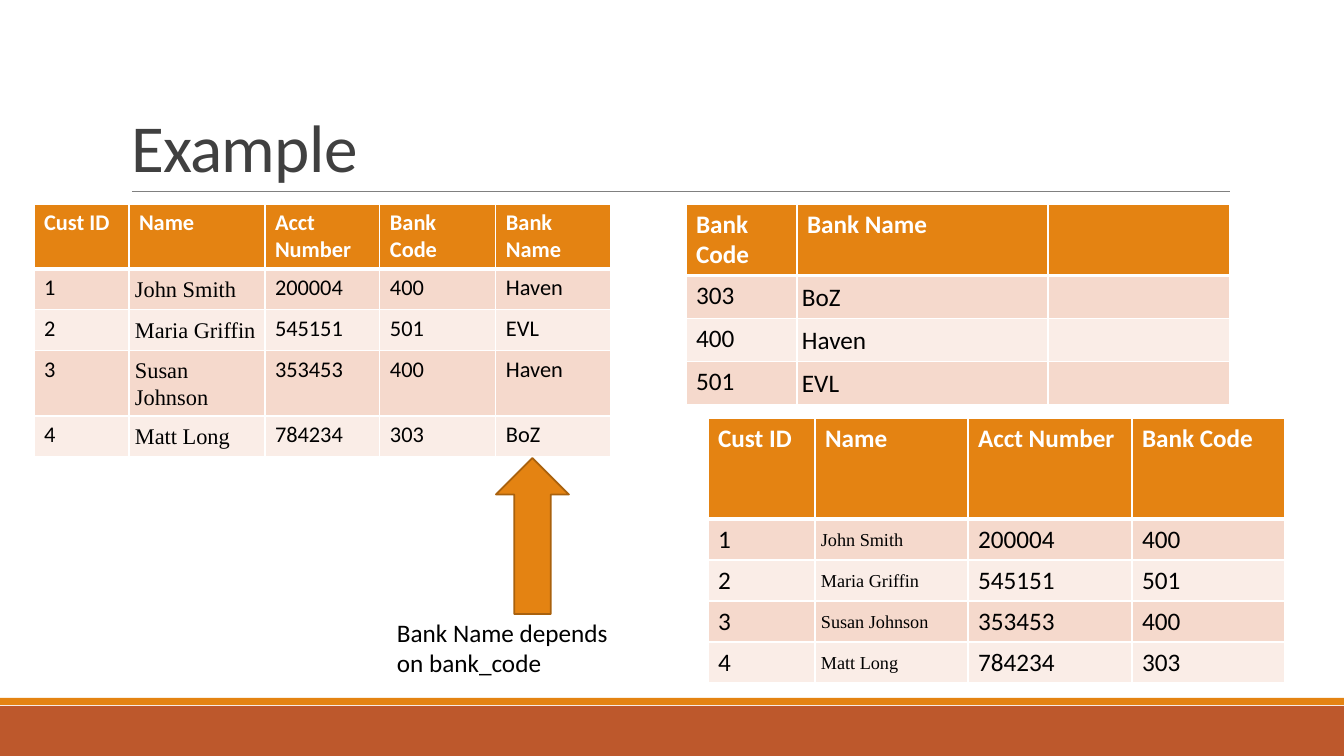
from lxml import etree
from pptx import Presentation
from pptx.dml.color import RGBColor
from pptx.enum.shapes import MSO_CONNECTOR as Connector, MSO_SHAPE as Preset
from pptx.enum.text import MSO_ANCHOR as Anchor, MSO_AUTO_SIZE as AutoSize, PP_ALIGN as Align
from pptx.oxml.ns import qn
from pptx.util import Emu, Pt

EMU_PER_PX = 914400 / 100.8
COLORS = {
    "orange": "E48312",
    "rust": "BD582C",
    "arrow_edge": "A9610D",
    "rule": "808080",
    "title": "404040",
    "white": "FFFFFF",
    "black": "000000",
    "band_dark": "F5D9CC",
    "band_light": "FAEDE7",
}
SANS, SERIF = "Calibri", "Times New Roman"
ROW_HEIGHT = 41

ACCOUNTS = [
    ["Cust ID", "Name", "Acct Number", "Bank Code", "Bank Name"],
    ["1", "John Smith", "200004", "400", "Haven"],
    ["2", "Maria Griffin", "545151", "501", "EVL"],
    ["3", "Susan Johnson", "353453", "400", "Haven"],
    ["4", "Matt Long", "784234", "303", "BoZ"],
]
BANKS = [
    ["Bank Code", "Bank Name", ""],
    ["303", "BoZ", ""],
    ["400", "Haven", ""],
    ["501", "EVL", ""],
]
ACCOUNTS_WITHOUT_BANK = [row[:4] for row in ACCOUNTS]


def px(value):
    return Emu(round(value * EMU_PER_PX))


def color(name):
    return RGBColor.from_string(COLORS[name])


def format_text(text_frame, size, color_name, font=SANS, bold=False):
    for paragraph in text_frame.paragraphs:
        for run in paragraph.runs:
            run.font.name = font
            run.font.size = Pt(size)
            run.font.bold = bold
            run.font.color.rgb = color(color_name)


def add_title(slide, text, left, top, width, height):
    title = slide.shapes.title
    title.left, title.top, title.width, title.height = map(px, (left, top, width, height))
    frame = title.text_frame
    frame.text = text
    frame.word_wrap = True
    frame.auto_size = AutoSize.NONE
    frame.vertical_anchor = Anchor.BOTTOM
    paragraph = frame.paragraphs[0]
    paragraph.alignment = Align.LEFT
    paragraph.line_spacing = 0.85
    format_text(frame, 48, "title")
    paragraph.runs[0].font._element.set("spc", "-50")


def add_preset(slide, preset, left, top, width, height, fill, edge=None):
    shape = slide.shapes.add_shape(preset, *map(px, (left, top, width, height)))
    shape.shadow.inherit = False
    shape.fill.solid()
    shape.fill.fore_color.rgb = color(fill)
    if edge:
        shape.line.color.rgb = color(edge)
        shape.line.width = Pt(1.25)
    else:
        shape.line.fill.background()
    return shape


def add_rule(slide, left, right, y):
    rule = slide.shapes.add_connector(Connector.STRAIGHT, px(left), px(y), px(right), px(y))
    rule.line.color.rgb = color("rule")
    rule.line.width = Pt(0.5)
    etree.SubElement(rule._element.spPr, qn("a:effectLst"))


def add_label(slide, text, left, top, width, height):
    box = slide.shapes.add_textbox(*map(px, (left, top, width, height)))
    frame = box.text_frame
    frame.text = text
    frame.word_wrap = True
    frame.auto_size = AutoSize.SHAPE_TO_FIT_TEXT
    format_text(frame, 18, "black")


def add_borders(cell, top, bottom):
    """Draw white cell borders; top and bottom are widths in points."""
    properties = cell._tc.get_or_add_tcPr()
    for side, points in (("L", 1), ("R", 1), ("T", top), ("B", bottom)):
        line = etree.SubElement(properties, qn(f"a:ln{side}"), w=str(Pt(points)))
        fill = etree.SubElement(line, qn("a:solidFill"))
        etree.SubElement(fill, qn("a:srgbClr"), val=COLORS["white"])


def format_cell(cell, row, size):
    add_borders(cell, top=3 if row == 1 else 1, bottom=3 if row == 0 else 1)
    fill = "orange" if row == 0 else "band_dark" if row % 2 else "band_light"
    cell.fill.solid()
    cell.fill.fore_color.rgb = color(fill)
    format_text(cell.text_frame, size, "black" if row else "white", bold=row == 0)


def format_name_cell(cell, size, font, inset):
    cell.vertical_anchor = Anchor.MIDDLE
    cell.margin_left = cell.margin_right = px(inset)
    cell.margin_top = cell.margin_bottom = px(inset)
    paragraph = cell.text_frame.paragraphs[0]
    paragraph.line_spacing = 1.07
    paragraph.space_after = Pt(18)
    format_text(cell.text_frame, size, "black", font)


def add_table(slide, rows, left, top, height, widths, size,
              name_size, name_font=SERIF, inset=6, header_height=ROW_HEIGHT):
    """Add a banded table whose second column holds names in their own style."""
    frame = slide.shapes.add_table(
        len(rows), len(widths), px(left), px(top), px(sum(widths)), px(height))
    table = frame.table
    for column, width in zip(table.columns, widths):
        column.width = px(width)
    for r, values in enumerate(rows):
        table.rows[r].height = px(ROW_HEIGHT if r else header_height)
        for c, value in enumerate(values):
            cell = table.cell(r, c)
            cell.text_frame.text = value
            format_cell(cell, r, size)
            if r and c == 1:
                format_name_cell(cell, name_size, name_font, inset)
    frame.height = px(height)


def main():
    presentation = Presentation()
    presentation.slide_width, presentation.slide_height = px(1344), px(756)
    slide = presentation.slides.add_slide(presentation.slide_layouts[5])

    add_preset(slide, Preset.RECTANGLE, 0, 706, 1344, 50, "rust")
    add_preset(slide, Preset.RECTANGLE, 0, 698, 1344, 7, "orange")
    add_rule(slide, 132, 1230, 191)
    add_title(slide, "Example", 121, 31, 1109, 160)

    add_table(slide, ACCOUNTS, 34, 204, 255, [95, 136, 115, 116, 115],
              size=16, name_size=16)
    add_table(slide, BANKS, 686, 204, 195, [111, 251, 182],
              size=18, name_size=18, name_font=SANS, inset=5)
    add_table(slide, ACCOUNTS_WITHOUT_BANK, 708, 418, 265, [107, 153, 164, 153],
              size=18, name_size=13, header_height=101)

    add_preset(slide, Preset.UP_ARROW, 496, 458, 73, 156, "orange", "arrow_edge")
    add_label(slide, "Bank Name depends on bank_code", 387, 612, 255, 72)
    presentation.save("out.pptx")


if __name__ == "__main__":
    main()
